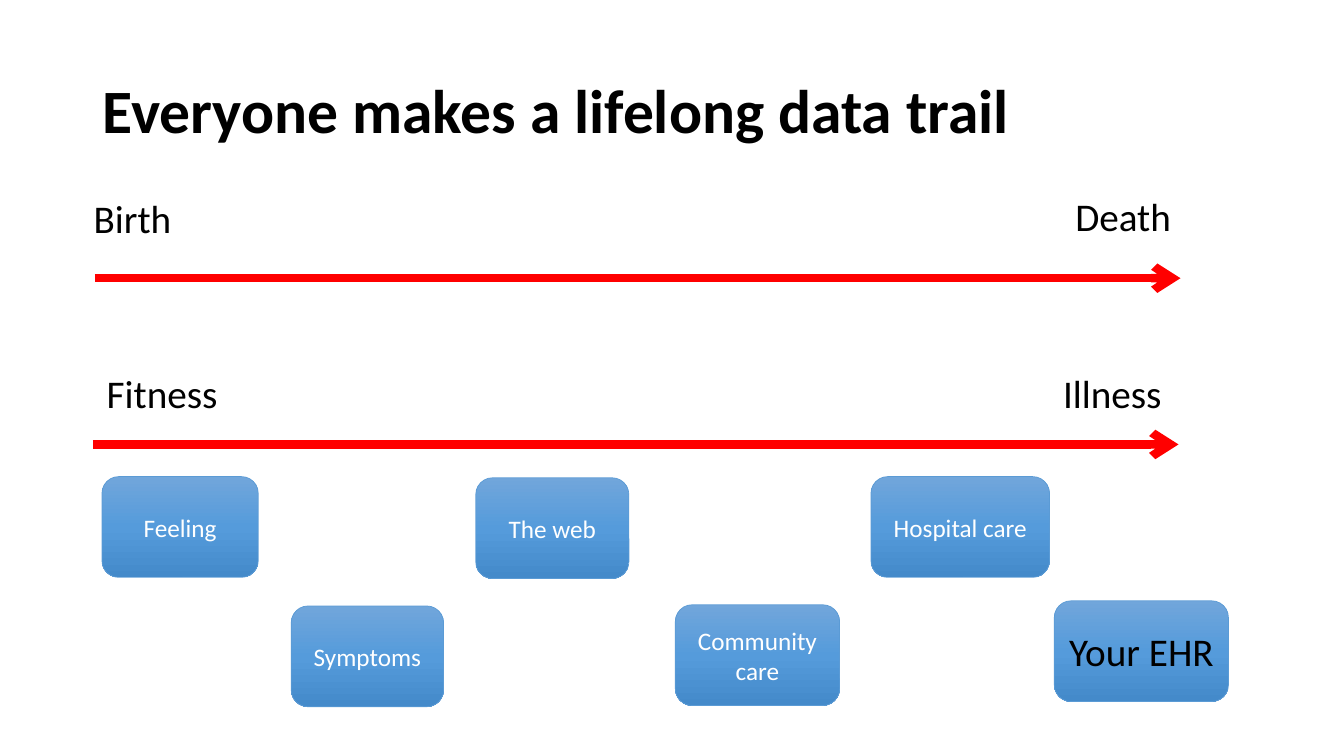
from lxml.etree import SubElement
from pptx import Presentation
from pptx.dml.color import RGBColor
from pptx.enum.shapes import MSO_CONNECTOR as Connector, MSO_SHAPE as Shape
from pptx.enum.text import MSO_ANCHOR as Anchor, PP_ALIGN as Align
from pptx.oxml.ns import qn
from pptx.util import Cm, Pt

BLACK = RGBColor(0x00, 0x00, 0x00)
WHITE = RGBColor(0xFF, 0xFF, 0xFF)
RED = RGBColor(0xFF, 0x00, 0x00)
OUTLINE = RGBColor(0x5B, 0x9B, 0xD5)
GRADIENT = [
    (0, RGBColor(0x71, 0xA6, 0xDB)),
    (50, RGBColor(0x55, 0x9B, 0xDB)),
    (100, RGBColor(0x44, 0x8A, 0xCA)),
]
FONT = "Calibri"

TITLE = "Everyone makes a lifelong data trail"
LABELS = [
    ("Birth", 2.11, 4.78),
    ("Death", 26.85, 4.72),
    ("Fitness", 2.44, 9.18),
    ("Illness", 26.54, 9.18),
]
ARROWS = [(2.39, 7.01), (2.34, 11.2)]
ARROW_LENGTH = 27.36
STAGES = [
    ("Feeling", 2.57, 12.01, 3.94, {}),
    ("Symptoms", 7.34, 15.27, 3.84, {}),
    ("The web", 11.99, 12.04, 3.86, {}),
    ("Community care", 17.02, 15.24, 4.14, {}),
    ("Hospital care", 21.95, 12.01, 4.5, {}),
    ("Your EHR", 26.57, 15.14, 4.39, {"size": 28, "color": BLACK}),
]
STAGE_HEIGHT = 2.54


def write(shape, text, size=28, color=BLACK, bold=False, align=Align.LEFT,
          anchor=Anchor.TOP, spacing=1.0):
    frame = shape.text_frame
    frame.word_wrap = True
    frame.vertical_anchor = anchor
    para = frame.paragraphs[0]
    para.alignment = align
    para.line_spacing = spacing
    span = para.add_run()
    span.text = text
    span.font.name = FONT
    span.font.size = Pt(size)
    span.font.bold = bold
    span.font.color.rgb = color


def add_label(page, text, left, top, width=4.55, height=1.45, **style):
    box = page.shapes.add_textbox(Cm(left), Cm(top), Cm(width), Cm(height))
    write(box, text, **style)


def add_arrow(page, left, top):
    arrow = page.shapes.add_connector(
        Connector.STRAIGHT, Cm(left), Cm(top), Cm(left + ARROW_LENGTH), Cm(top))
    arrow.line.color.rgb = RED
    arrow.line.width = Pt(6)
    properties = arrow._element.spPr
    SubElement(properties.find(qn("a:ln")), qn("a:tailEnd"), type="arrow")
    SubElement(properties, qn("a:effectLst"))


def fill_gradient(shape):
    shape.fill.gradient()
    shape.fill.gradient_angle = 270
    stops = shape._element.spPr.find(qn("a:gradFill")).find(qn("a:gsLst"))
    stops.clear()
    for percent, color in GRADIENT:
        stop = SubElement(stops, qn("a:gs"), pos=str(percent * 1000))
        SubElement(stop, qn("a:srgbClr"), val=str(color))


def add_stage(page, text, left, top, width, style):
    box = page.shapes.add_shape(
        Shape.ROUNDED_RECTANGLE, Cm(left), Cm(top), Cm(width), Cm(STAGE_HEIGHT))
    box.shadow.inherit = False
    fill_gradient(box)
    box.line.color.rgb = OUTLINE
    box.line.width = Pt(0.5)
    look = {"size": 18, "color": WHITE} | style
    write(box, text, align=Align.CENTER, anchor=Anchor.MIDDLE, **look)


def main():
    deck = Presentation()
    deck.slide_width, deck.slide_height = Cm(33.87), Cm(19.05)
    page = deck.slides.add_slide(deck.slide_layouts[6])
    add_label(page, TITLE, 2.34, 1.02, 29.21, 3.68, size=44, bold=True,
              anchor=Anchor.MIDDLE, spacing=0.9)
    for label in LABELS:
        add_label(page, *label)
    for arrow in ARROWS:
        add_arrow(page, *arrow)
    for stage in STAGES:
        add_stage(page, *stage)
    deck.save("out.pptx")


if __name__ == "__main__":
    main()
